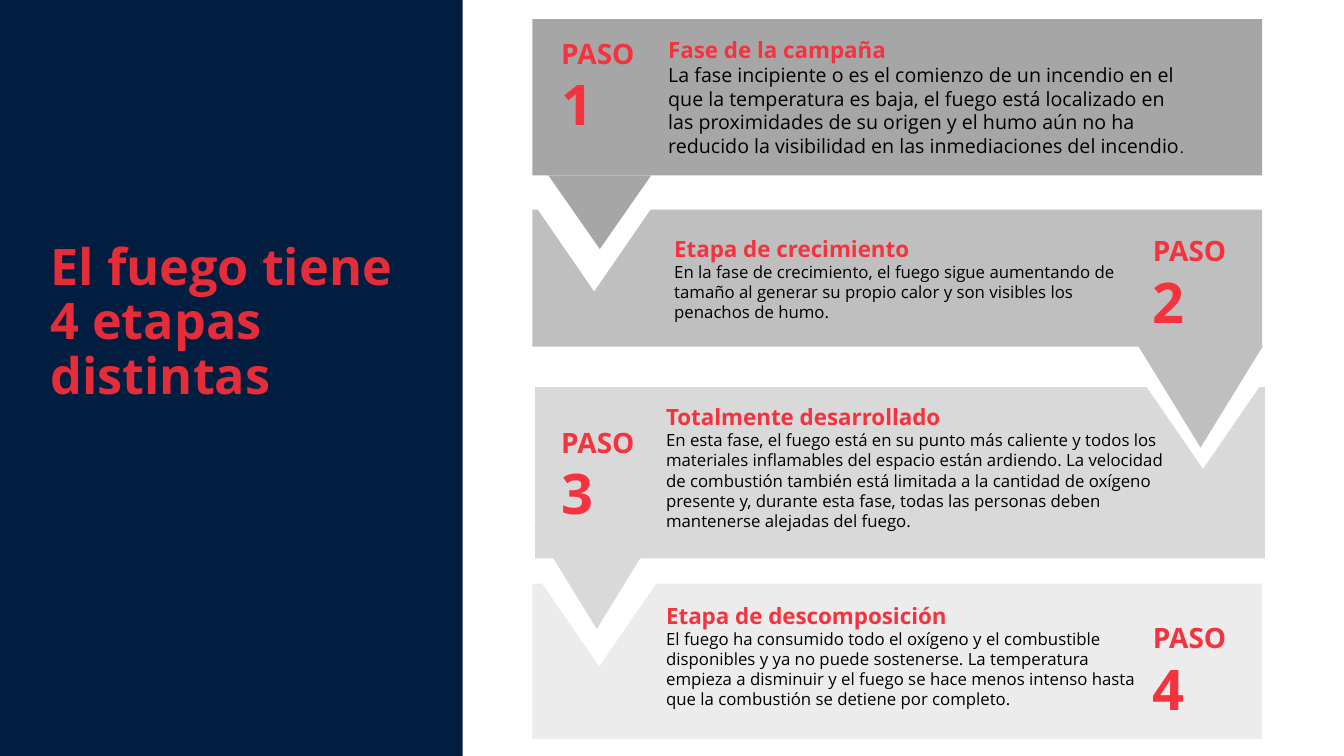
from dataclasses import dataclass

from pptx import Presentation
from pptx.dml.color import RGBColor
from pptx.enum import shapes, text
from pptx.util import Pt

TITLE = "El fuego tiene 4 etapas distintas"
STEPS = [
    dict(
        heading="Fase de la campaña",
        body="La fase incipiente o es el comienzo de un incendio en el que la "
        "temperatura es baja, el fuego está localizado en las proximidades de su "
        "origen y el humo aún no ha reducido la visibilidad en las inmediaciones "
        "del incendio",
        ending=".", size=14, shade="A6A6A6",
        bar=(380.2, 13.7, 111.6), copy=(470.2, 22.3, 390.2, 94.3), badge_top=22.3,
        notch=(382.3, 146.9), arrow=(391.7, 125.3, 73.4, 52.6),
    ),
    dict(
        heading="Etapa de crecimiento",
        body="En la fase de crecimiento, el fuego sigue aumentando de tamaño al "
        "generar su propio calor y son visibles los penachos de humo.",
        ending="", size=12, shade="BFBFBF",
        bar=(380.2, 149.8, 97.9), copy=(474.5, 164.2, 342, 70.6), badge_top=163.4,
        notch=(817.2, 273.6), arrow=(812.9, 247, 89.3, 72.7),
    ),
    dict(
        heading="Totalmente desarrollado",
        body="En esta fase, el fuego está en su punto más caliente y todos los "
        "materiales inflamables del espacio están ardiendo. La velocidad de "
        "combustión también está limitada a la cantidad de oxígeno presente y, "
        "durante esta fase, todas las personas deben mantenerse alejadas del fuego.",
        ending="", size=12, shade="D9D9D9",
        bar=(382.3, 276.5, 122.4), copy=(468.7, 284.4, 370.1, 99.4), badge_top=300.2,
        notch=(385.9, 414.7), arrow=(381.6, 376.6, 89.3, 72.7),
    ),
    dict(
        heading="Etapa de descomposición",
        body="El fuego ha consumido todo el oxígeno y el combustible disponibles y "
        "ya no puede sostenerse. La temperatura empieza a disminuir y el fuego se "
        "hace menos intenso hasta que la combustión se detiene por completo.",
        ending="", size=12, shade="ECECEC",
        bar=(380.2, 416.9, 110.9), copy=(468.7, 426.2, 352.1, 85), badge_top=439.9,
        notch=None, arrow=None,
    ),
]
BAR_WIDTH = 521.3
BADGE_SIZE = (85, 79.9)
BADGE_LEFTS = (393.8, 816.5)
NOTCH_SIZE = (84.2, 61.2)


@dataclass(frozen=True)
class Theme:
    font: str = "Open Sans"
    navy: str = "011E41"
    title_red: str = "E42D38"
    red: str = "F5333F"
    black: str = "000000"
    white: str = "FFFFFF"
    title: int = 36
    heading: int = 16
    ending: int = 11
    label: int = 20
    number: int = 40


THEME = Theme()


def write(para, words, size, color=THEME.black, bold=False):
    span = para.add_run()
    span.text = words
    span.font.name = THEME.font
    span.font.size = Pt(size)
    span.font.bold = bold
    span.font.color.rgb = RGBColor.from_string(color)


def add_block(page, kind, place, color, rotation=0):
    block = page.shapes.add_shape(kind, *map(Pt, place))
    block.shadow.inherit = False
    block.fill.solid()
    block.fill.fore_color.rgb = RGBColor.from_string(color)
    block.line.fill.background()
    block.rotation = rotation
    return block


def add_text_box(page, place):
    box = page.shapes.add_textbox(*map(Pt, place))
    box.text_frame.word_wrap = True
    return box.text_frame


def add_title(page):
    panel = add_block(page, shapes.MSO_SHAPE.RECTANGLE, (-1.4, -0.7, 331.9, 540.7), THEME.navy)
    title = page.shapes.title
    panel.element.addnext(title.element)
    title.left, title.top, title.width, title.height = map(Pt, (28.8, 54, 281.5, 354.2))
    frame = title.text_frame
    frame.word_wrap = True
    frame.auto_size = text.MSO_AUTO_SIZE.NONE
    frame.vertical_anchor = text.MSO_ANCHOR.MIDDLE
    para = frame.paragraphs[0]
    para.alignment = text.PP_ALIGN.LEFT
    para.line_spacing = 0.9
    write(para, TITLE, THEME.title, color=THEME.title_red, bold=True)


def add_step(page, index, step):
    left, top, height = step["bar"]
    add_block(page, shapes.MSO_SHAPE.RECTANGLE, (left, top, BAR_WIDTH, height), step["shade"])

    badge = add_text_box(page, (BADGE_LEFTS[index % 2], step["badge_top"], *BADGE_SIZE))
    para = badge.paragraphs[0]
    write(para, "PASO ", THEME.label, color=THEME.red, bold=True)
    write(para, str(index + 1), THEME.number, color=THEME.red, bold=True)

    frame = add_text_box(page, step["copy"])
    write(frame.paragraphs[0], step["heading"], THEME.heading, color=THEME.red, bold=True)
    para = frame.add_paragraph()
    write(para, step["body"], step["size"])
    if step["ending"]:
        write(para, step["ending"], THEME.ending)


def add_arrow(page, step):
    triangle = shapes.MSO_SHAPE.ISOSCELES_TRIANGLE
    add_block(page, triangle, (*step["notch"], *NOTCH_SIZE), THEME.white, rotation=180)
    add_block(page, triangle, step["arrow"], step["shade"], rotation=180)


def main():
    deck = Presentation()
    deck.slide_width, deck.slide_height = Pt(960), Pt(540)
    page = deck.slides.add_slide(deck.slide_layouts.get_by_name("Title Only"))
    add_title(page)
    for index, step in enumerate(STEPS):
        add_step(page, index, step)
    for step in STEPS:
        if step["arrow"]:
            add_arrow(page, step)
    deck.save("out.pptx")


if __name__ == "__main__":
    main()
